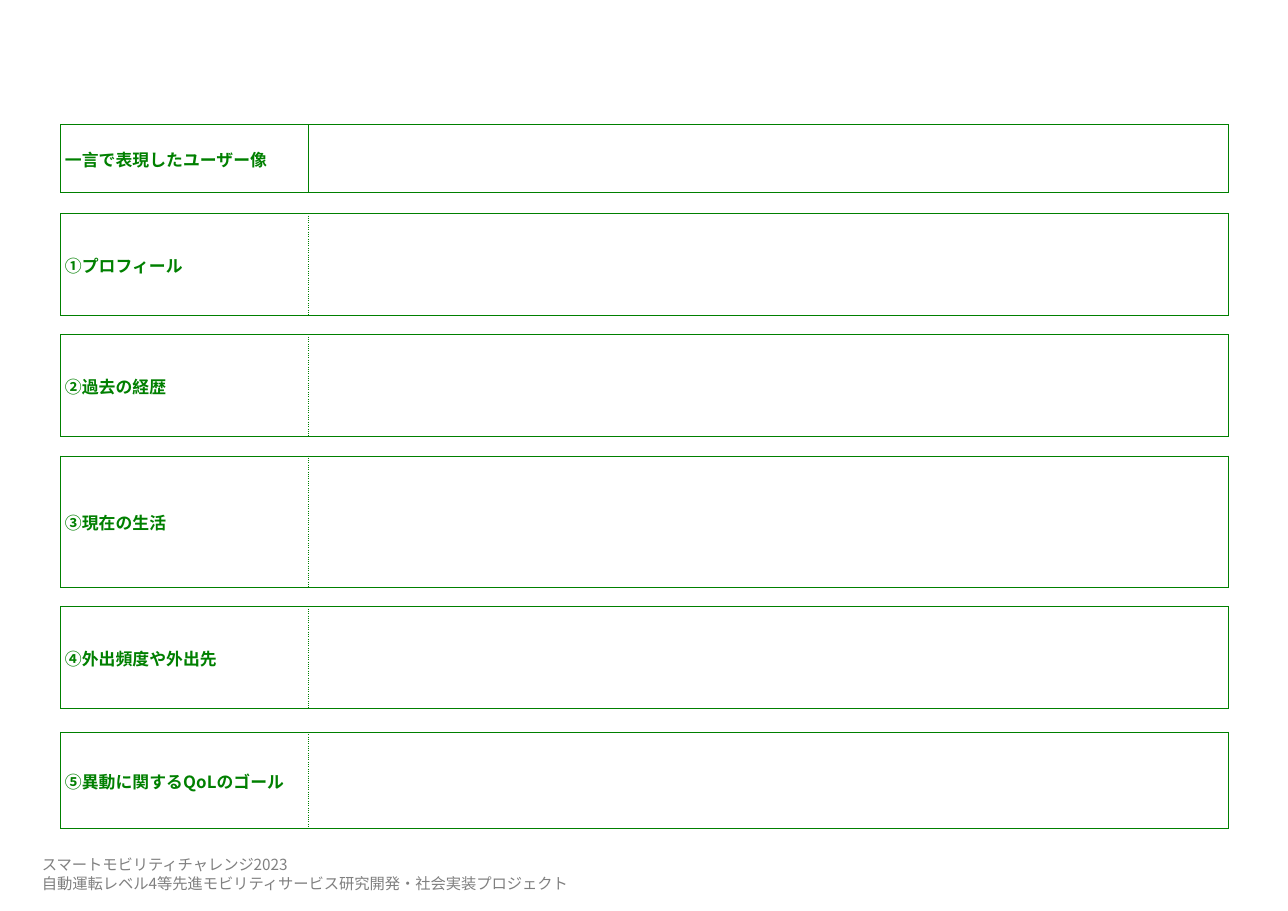
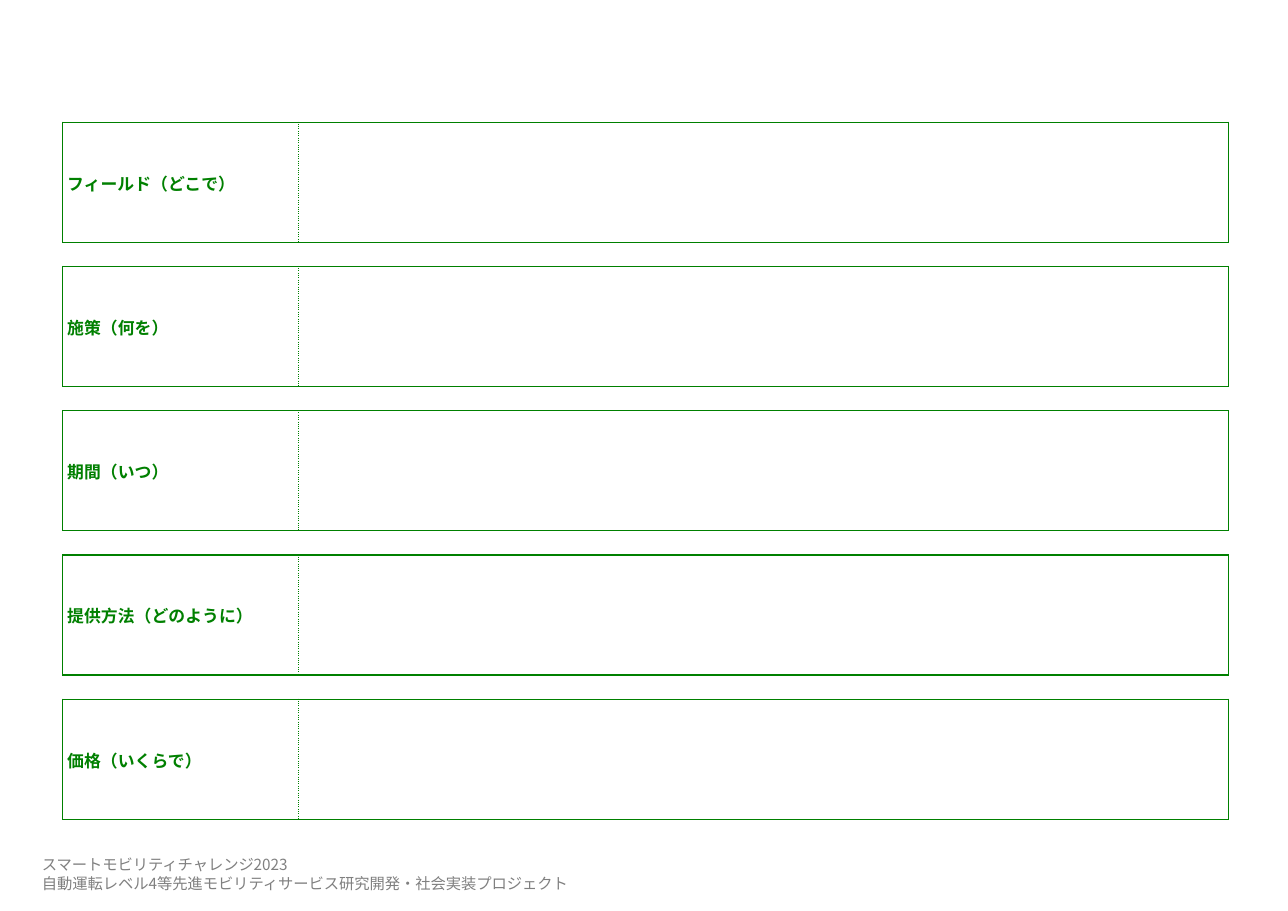
"""Build two blank worksheets: a user persona form and a service plan form."""
from lxml.etree import SubElement
from pptx import Presentation
from pptx.dml.color import RGBColor
from pptx.enum.text import MSO_ANCHOR
from pptx.oxml.ns import qn
from pptx.util import Inches, Pt

COLORS = {"green": "008000", "gray": "808080"}
FONT = "Noto Sans CJK JP"
FOOTER = [
    "スマートモビリティチャレンジ2023",
    "自動運転レベル4等先進モビリティサービス研究開発・社会実装プロジェクト",
]
FORMS = [
    {
        "left": 0.55, "top": 1.13, "columns": [2.25, 8.35], "line": 0.5,
        "labels": ["一言で表現したユーザー像", "①プロフィール", "②過去の経歴",
                   "③現在の生活", "④外出頻度や外出先", "⑤異動に関するQoLのゴール"],
        "heights": [0.62, 0.92, 0.92, 1.19, 0.92, 0.87],
        "gaps": [0.19, 0.18, 0.18, 0.18, 0.22],
        "solid_dividers": [0],
    },
    {
        "left": 0.57, "top": 1.11, "columns": [2.14, 8.44], "line": 1,
        "labels": ["フィールド（どこで）", "施策（何を）", "期間（いつ）",
                   "提供方法（どのように）", "価格（いくらで）"],
        "heights": [1.09] * 5,
        "gaps": [0.22] * 4,
        "solid_dividers": [],
    },
]


def write(paragraph, text, size, color, bold=False):
    span = paragraph.add_run()
    span.text = text
    span.font.size = Pt(size)
    span.font.name = FONT
    span.font.bold = bold
    span.font.color.rgb = RGBColor.from_string(COLORS[color])
    SubElement(span.font._element, qn("a:ea"), typeface=FONT)


def add_border(cell, side, width, dash="solid"):
    properties = cell._tc.get_or_add_tcPr()
    line = SubElement(properties, qn(f"a:ln{side}"), w=str(Pt(width)))
    if width:
        fill = SubElement(line, qn("a:solidFill"))
        SubElement(fill, qn("a:srgbClr"), val=COLORS["green"])
        SubElement(line, qn("a:prstDash"), val=dash)
    else:
        SubElement(line, qn("a:noFill"))


deck = Presentation()
deck.slide_width = Inches(11.69)
deck.slide_height = Inches(8.27)

for form in FORMS:
    page = deck.slides.add_slide(deck.slide_layouts[6])

    box = page.shapes.add_textbox(Inches(0.38), Inches(7.71), Inches(7.91), Inches(0.44))
    frame = box.text_frame
    frame.word_wrap = True
    frame.vertical_anchor = MSO_ANCHOR.BOTTOM
    frame.margin_left = frame.margin_right = 0
    for index, text in enumerate(FOOTER):
        para = frame.add_paragraph() if index else frame.paragraphs[0]
        para.line_spacing = Pt(12)
        write(para, text, size=10, color="gray")

    gaps = form["gaps"]
    heights = [form["heights"][0]]
    for gap, height in zip(gaps, form["heights"][1:]):
        heights += [gap, height]
    table = page.shapes.add_table(
        len(heights), 2, Inches(form["left"]), Inches(form["top"]),
        Inches(sum(form["columns"])), Inches(sum(heights))).table
    table.first_row = False
    table.horz_banding = False
    for column, width in zip(table.columns, form["columns"]):
        column.width = Inches(width)

    for row_index, height in enumerate(heights):
        row = table.rows[row_index]
        row.height = Inches(height)
        section, is_gap = divmod(row_index, 2)
        outer = 0 if is_gap else form["line"]
        inner = 0 if is_gap else 0.5
        dash = "solid" if section in form["solid_dividers"] else "sysDot"
        for column_index, cell in enumerate(row.cells):
            is_label = column_index == 0
            sides = [("L", outer, "solid"), ("R", inner, dash)]
            if not is_label:
                sides = [("L", inner, dash), ("R", outer, "solid")]
            for side, width, style in sides:
                add_border(cell, side, width, style)
            for side in "TB":
                add_border(cell, side, form["line"])
            cell.fill.background()
            cell.vertical_anchor = MSO_ANCHOR.MIDDLE
            cell.margin_left = Inches(0.04)
            cell.margin_top = cell.margin_right = Inches(0.01)
            cell.margin_bottom = 0
            para = cell.text_frame.paragraphs[0]
            if is_label and not is_gap:
                write(para, form["labels"][section], size=11, color="green", bold=True)
            else:
                SubElement(para._p, qn("a:endParaRPr"), sz="600")

deck.save("out.pptx")
